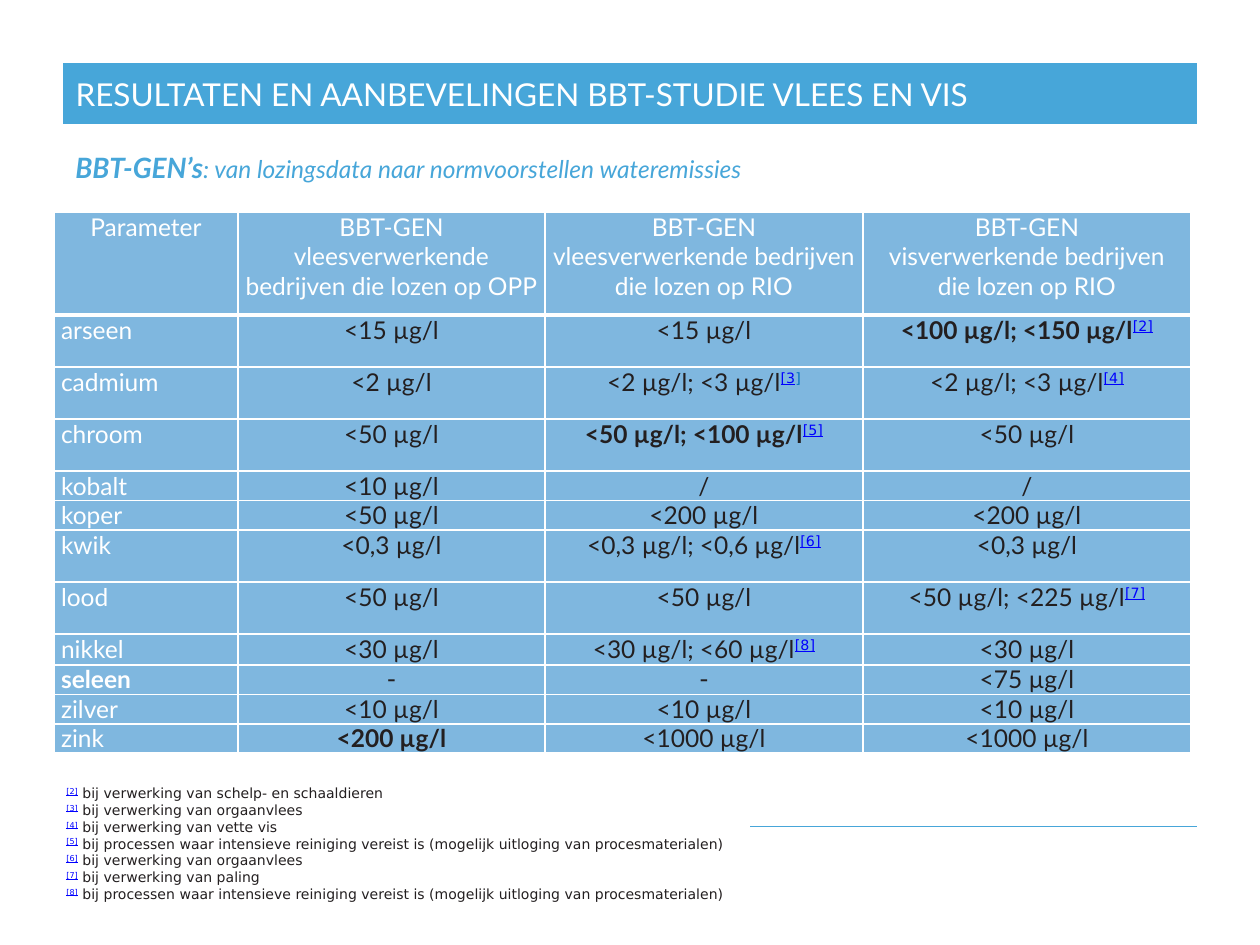
import pptx
import pptx.util
import pptx.dml.color
import pptx.enum.shapes
import pptx.enum.text
import pptx.oxml
import pptx.oxml.ns

RGB = pptx.dml.color.RGBColor
ALIGN = pptx.enum.text.PP_ALIGN
ANCHOR = pptx.enum.text.MSO_ANCHOR
FIT = pptx.enum.text.MSO_AUTO_SIZE

PX_PER_INCH = 126
WHITE = RGB(0xFF, 0xFF, 0xFF)
SKY = RGB(0x47, 0xA6, 0xD9)
BLUE = RGB(0x00, 0x70, 0xC0)
LINK = RGB(0x00, 0x00, 0xFF)
INK = RGB(0x23, 0x1F, 0x20)

BODY_FONT, NOTE_FONT = "Lato", "DejaVu Sans"
WHITE_TEXT = {"name": BODY_FONT, "size": 14, "color": WHITE, "bold": False}
VALUE_TEXT = WHITE_TEXT | {"color": INK}
MARK_TEXT = {"name": NOTE_FONT, "size": 14, "color": LINK, "bold": False,
             "underline": True, "baseline": 30}

COLUMNS = [184, 307, 318, 328]
ROW_HEIGHTS = [103, 52, 52, 52, 26, 26, 52, 52, 31, 26, 26, 26]
HEADERS = [
    ["Parameter"],
    ["BBT-GEN", "vleesverwerkende bedrijven die lozen op OPP"],
    ["BBT-GEN", "vleesverwerkende bedrijven die lozen op RIO"],
    ["BBT-GEN", "visverwerkende bedrijven die lozen op RIO"],
]
LIMITS = [
    ["arseen", "<15 µg/l", "<15 µg/l", "<100 µg/l; <150 µg/l[2]"],
    ["cadmium", "<2 µg/l", "<2 µg/l; <3 µg/l[3]", "<2 µg/l; <3 µg/l[4]"],
    ["chroom", "<50 µg/l", "<50 µg/l; <100 µg/l[5]", "<50 µg/l"],
    ["kobalt", "<10 µg/l", "/", "/"],
    ["koper", "<50 µg/l", "<200 µg/l", "<200 µg/l"],
    ["kwik", "<0,3 µg/l", "<0,3 µg/l; <0,6 µg/l[6]", "<0,3 µg/l"],
    ["lood", "<50 µg/l", "<50 µg/l", "<50 µg/l; <225 µg/l[7]"],
    ["nikkel", "<30 µg/l", "<30 µg/l; <60 µg/l[8]", "<30 µg/l"],
    ["seleen", "-", "-", "<75 µg/l"],
    ["zilver", "<10 µg/l", "<10 µg/l", "<10 µg/l"],
    ["zink", "<200 µg/l", "<1000 µg/l", "<1000 µg/l"],
]
BOLD_CELLS = {("arseen", 3), ("chroom", 2), ("seleen", 0), ("zink", 1)}
PROCESS_NOTE = ("bij processen waar intensieve reiniging vereist is "
                "(mogelijk uitloging van procesmaterialen)")
FOOTNOTES = [
    "bij verwerking van schelp- en schaaldieren",
    "bij verwerking van orgaanvlees",
    "bij verwerking van vette vis",
    PROCESS_NOTE,
    "bij verwerking van orgaanvlees",
    "bij verwerking van paling",
    PROCESS_NOTE,
]


def px(n):
    return pptx.util.Emu(round(n * 914400 / PX_PER_INCH))


def place(sp, box):
    for attr, n in zip(("left", "top", "width", "height"), box):
        setattr(sp, attr, px(n))


def add_run(p, text, fmt):
    r = p.add_run()
    r.text = text
    for key, value in fmt.items():
        if key == "color":
            r.font.color.rgb = value
        elif key == "baseline":
            r._r.get_or_add_rPr().set("baseline", str(value * 1000))
        else:
            setattr(r.font, key, pptx.util.Pt(value) if key == "size" else value)


def fill_paragraphs(tf, paragraphs, align):
    """Write one paragraph for each list of (text, format) runs."""
    for i, runs in enumerate(paragraphs):
        p = tf.paragraphs[0] if i == 0 else tf.add_paragraph()
        p.alignment = align
        for text, fmt in runs:
            add_run(p, text, fmt)


def add_footer_line(s, box):
    x, y, w, h = box
    line = s.shapes.add_connector(pptx.enum.shapes.MSO_CONNECTOR.STRAIGHT,
                                  px(x), px(y), px(x + w), px(y + h))
    line.line.color.rgb = SKY
    line.line.width = pptx.util.Pt(0.5)
    line._element.spPr.append(pptx.oxml.parse_xml(
        f'<a:effectLst {pptx.oxml.ns.nsdecls("a")}/>'))


def add_title(s, box):
    sp = s.shapes.title
    place(sp, box)
    sp.fill.solid()
    sp.fill.fore_color.rgb = SKY
    tf = sp.text_frame
    tf.auto_size = FIT.NONE
    tf.vertical_anchor = ANCHOR.MIDDLE
    title = "RESULTATEN EN AANBEVELINGEN BBT-STUDIE VLEES EN VIS"
    fill_paragraphs(tf, [[(title, WHITE_TEXT | {"size": 18})]], ALIGN.LEFT)


def add_subtitle(s, box):
    tf = s.shapes.add_textbox(*map(px, box)).text_frame
    tf.word_wrap = True
    fmt = WHITE_TEXT | {"color": SKY, "italic": True}
    fill_paragraphs(tf, [[
        ("BBT-GEN’s", fmt | {"size": 16, "bold": True}),
        (": van lozingsdata naar normvoorstellen wateremissies", fmt),
    ]], ALIGN.LEFT)


def style_cell(cell, bottom_width):
    cell.margin_left = cell.margin_right = px(7)
    cell.margin_top = cell.margin_bottom = 0
    tcPr = cell._tc.get_or_add_tcPr()
    for side, width in zip("LRTB", (1, 1, 1, bottom_width)):
        tcPr.append(pptx.oxml.parse_xml(
            f'<a:ln{side} {pptx.oxml.ns.nsdecls("a")} w="{width * 12700}">'
            f'<a:solidFill><a:srgbClr val="{WHITE}"/></a:solidFill></a:ln{side}>'))
    cell.fill.solid()
    cell.fill.fore_color.rgb = BLUE
    color = tcPr.find(pptx.oxml.ns.qn("a:solidFill"))[0]
    color.append(pptx.oxml.parse_xml(
        f'<a:alpha {pptx.oxml.ns.nsdecls("a")} val="50000"/>'))


def limit_runs(name, column, text):
    """Split a cell into its value and its raised footnote mark."""
    value, _, mark = text.partition("[")
    fmt = dict(VALUE_TEXT if column else WHITE_TEXT)
    fmt["bold"] = (name, column) in BOLD_CELLS
    if value == "-":
        fmt["name"] = NOTE_FONT
    runs = [(value, fmt)]
    if mark == "3]":
        runs += [("[3", MARK_TEXT),
                 ("]", MARK_TEXT | {"color": BLUE, "underline": False})]
    elif mark:
        runs.append(("[" + mark, MARK_TEXT))
    return runs


def add_limits_table(s, box):
    table = s.shapes.add_table(len(ROW_HEIGHTS), len(COLUMNS), *map(px, box)).table
    table.first_row = table.horz_banding = False
    for column, width in zip(table.columns, COLUMNS):
        column.width = px(width)
    for row, height in zip(table.rows, ROW_HEIGHTS):
        row.height = px(height)
    for c, lines in enumerate(HEADERS):
        cell = table.cell(0, c)
        style_cell(cell, 3)
        fill_paragraphs(cell.text_frame, [[(t, WHITE_TEXT)] for t in lines],
                        ALIGN.CENTER)
    for i, limits in enumerate(LIMITS, 1):
        for c, text in enumerate(limits):
            cell = table.cell(i, c)
            style_cell(cell, 1)
            fill_paragraphs(cell.text_frame, [limit_runs(limits[0], c, text)],
                            ALIGN.CENTER if c else ALIGN.JUSTIFY)


def add_footnotes(s, box):
    sp = s.shapes.add_shape(pptx.enum.shapes.MSO_SHAPE.RECTANGLE, *map(px, box))
    sp.shadow.inherit = False
    sp.fill.solid()
    sp.fill.fore_color.rgb = WHITE
    sp.line.fill.background()
    tf = sp.text_frame
    tf.word_wrap = False
    tf.auto_size = FIT.SHAPE_TO_FIT_TEXT
    tf.vertical_anchor = ANCHOR.MIDDLE
    small = {"size": 8}
    note = VALUE_TEXT | small | {"name": NOTE_FONT}
    fill_paragraphs(tf, [[(f"[{n}]", MARK_TEXT | small), (" " + text, note)]
                         for n, text in enumerate(FOOTNOTES, 2)], ALIGN.JUSTIFY)


def main():
    prs = pptx.Presentation()
    prs.slide_width, prs.slide_height = px(1260), px(945)
    s = prs.slides.add_slide(prs.slide_layouts[5])
    add_footer_line(s, (63, 826, 1134, 0))
    add_title(s, (63, 63, 1134, 61))
    add_subtitle(s, (63, 144, 1134, 98))
    add_limits_table(s, (54, 212, sum(COLUMNS), sum(ROW_HEIGHTS)))
    add_footnotes(s, (54, 778, 696, 131))
    prs.save("out.pptx")


if __name__ == "__main__":
    main()
